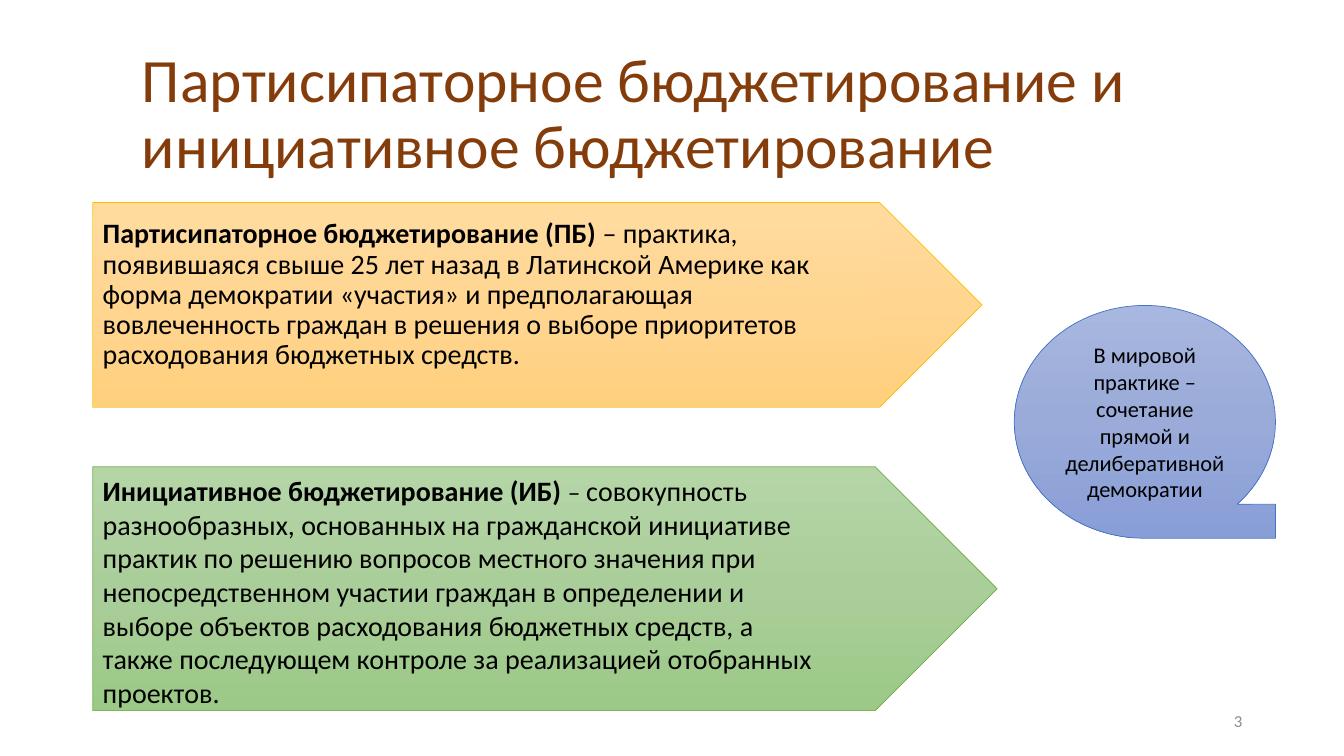
import copy
import pptx
import pptx.util
import pptx.dml.color
import pptx.enum.shapes
import pptx.enum.text

Inches = pptx.util.Inches
Pt = pptx.util.Pt
Kind = pptx.enum.shapes.MSO_SHAPE
Align = pptx.enum.text.PP_ALIGN
Anchor = pptx.enum.text.MSO_ANCHOR

COLORS = {
    "title": "843C0B",
    "text": "000000",
    "number": "8C8C8C",
    "gold": "FFC000",
    "green": "70AD47",
    "blue": "4472C4",
}
FADES = {
    "gold": ("FFDB9E", "FFD590", "FFD07C"),
    "green": ("B5D5A7", "AACE9A", "9CC987"),
    "blue": ("A8B7DF", "9AABD9", "889ED7"),
}


def color(code):
    return pptx.dml.color.RGBColor.from_string(code)


def add_fade(shape, hue):
    fill = shape.fill
    fill.gradient()
    fill.gradient_angle = 270
    first = shape._element.spPr.xpath(".//a:gs")[0]
    first.addnext(copy.deepcopy(first))
    for index, (stop, code) in enumerate(zip(fill.gradient_stops, FADES[hue])):
        stop.position = index / 2
        stop.color.rgb = color(code)


def add_form(slide, kind, box, hue, edge=True):
    shape = slide.shapes.add_shape(kind, *map(Inches, box))
    shape.shadow.inherit = False
    add_fade(shape, hue)
    if edge:
        shape.line.color.rgb = color(COLORS[hue])
        shape.line.width = Pt(0.5)
    else:
        shape.line.fill.background()
    return shape


def add_text(shape, runs, hue="text", align=Align.LEFT, anchor=Anchor.TOP,
             space=1.0, before=0):
    frame = shape.text_frame
    frame.word_wrap = True
    frame.vertical_anchor = anchor
    para = frame.paragraphs[0]
    para.alignment = align
    para.line_spacing = space
    para.space_before = Pt(before)
    for text, size, bold in runs:
        run = para.add_run()
        run.text = text
        run.font.name = "Calibri"
        run.font.size = Pt(size)
        run.font.bold = bold
        run.font.color.rgb = color(COLORS[hue])


def add_box(slide, box):
    return slide.shapes.add_textbox(*map(Inches, box))


def main():
    deck = pptx.Presentation()
    deck.slide_width = Inches(13.33)
    deck.slide_height = Inches(7.5)
    slide = deck.slides.add_slide(deck.slide_layouts[6])

    add_form(slide, Kind.PENTAGON, (0.92, 4.63, 8.97, 2.42), "green")
    add_form(slide, Kind.PENTAGON, (0.92, 2.01, 8.82, 2.03), "gold")

    title = add_box(slide, (1.31, 0.42, 11.5, 1.45))
    add_text(title, [
        ("Партисипаторное бюджетирование и инициативное бюджетирование", 44, False),
    ], "title", anchor=Anchor.MIDDLE, space=0.9)

    world = add_form(slide, Kind.RECTANGLE, (0.92, 2.13, 7.79, 1.92), "gold", False)
    add_text(world, [
        ("Партисипаторное бюджетирование (ПБ) ", 20, True),
        ("– практика, появившаяся свыше 25 лет назад в Латинской Америке "
         "как форма демократии «участия» и предполагающая вовлеченность "
         "граждан в решения о выборе приоритетов расходования бюджетных "
         "средств.", 20, False),
    ], space=0.9, before=10)

    local = add_box(slide, (0.92, 4.65, 7.39, 2.51))
    add_text(local, [
        ("Инициативное бюджетирование (ИБ) ", 20, True),
        ("– ", 18, False),
        ("совокупность разнообразных, основанных на гражданской инициативе "
         "практик по решению вопросов местного значения при "
         "непосредственном участии граждан в определении и выборе объектов "
         "расходования бюджетных средств, а также последующем контроле за "
         "реализацией отобранных проектов.", 20, False),
    ])

    tape = add_form(slide, Kind.FLOWCHART_SEQUENTIAL_ACCESS_STORAGE,
                    (10.06, 3.03, 2.59, 2.31), "blue")
    add_text(tape, [
        ("В мировой практике – сочетание прямой и делиберативной демократии", 16, False),
    ], align=Align.CENTER, anchor=Anchor.MIDDLE)

    number = add_box(slide, (9.42, 6.95, 3, 0.4))
    add_text(number, [("3", 12, False)], "number", Align.RIGHT, Anchor.MIDDLE)

    deck.save("out.pptx")


if __name__ == "__main__":
    main()
